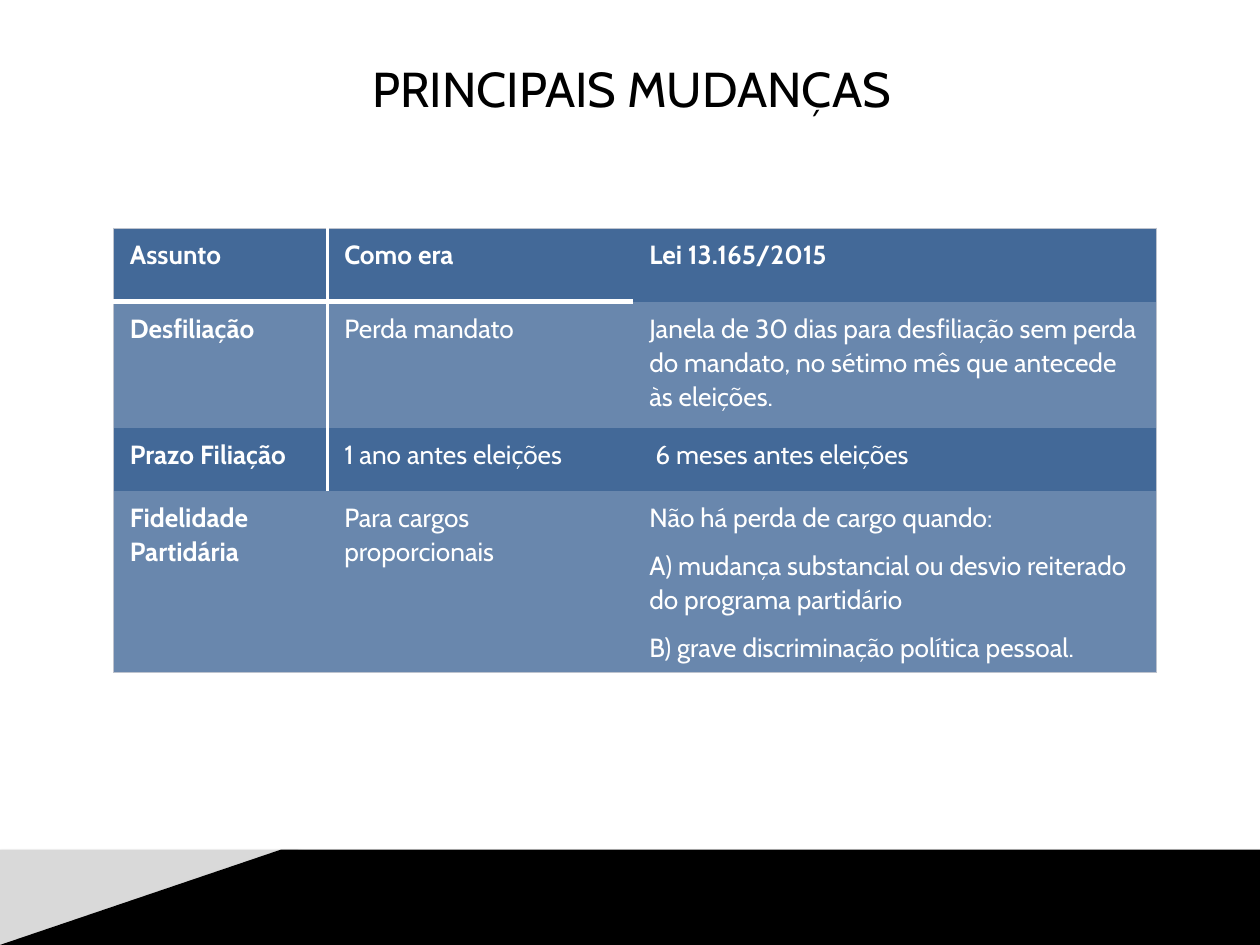
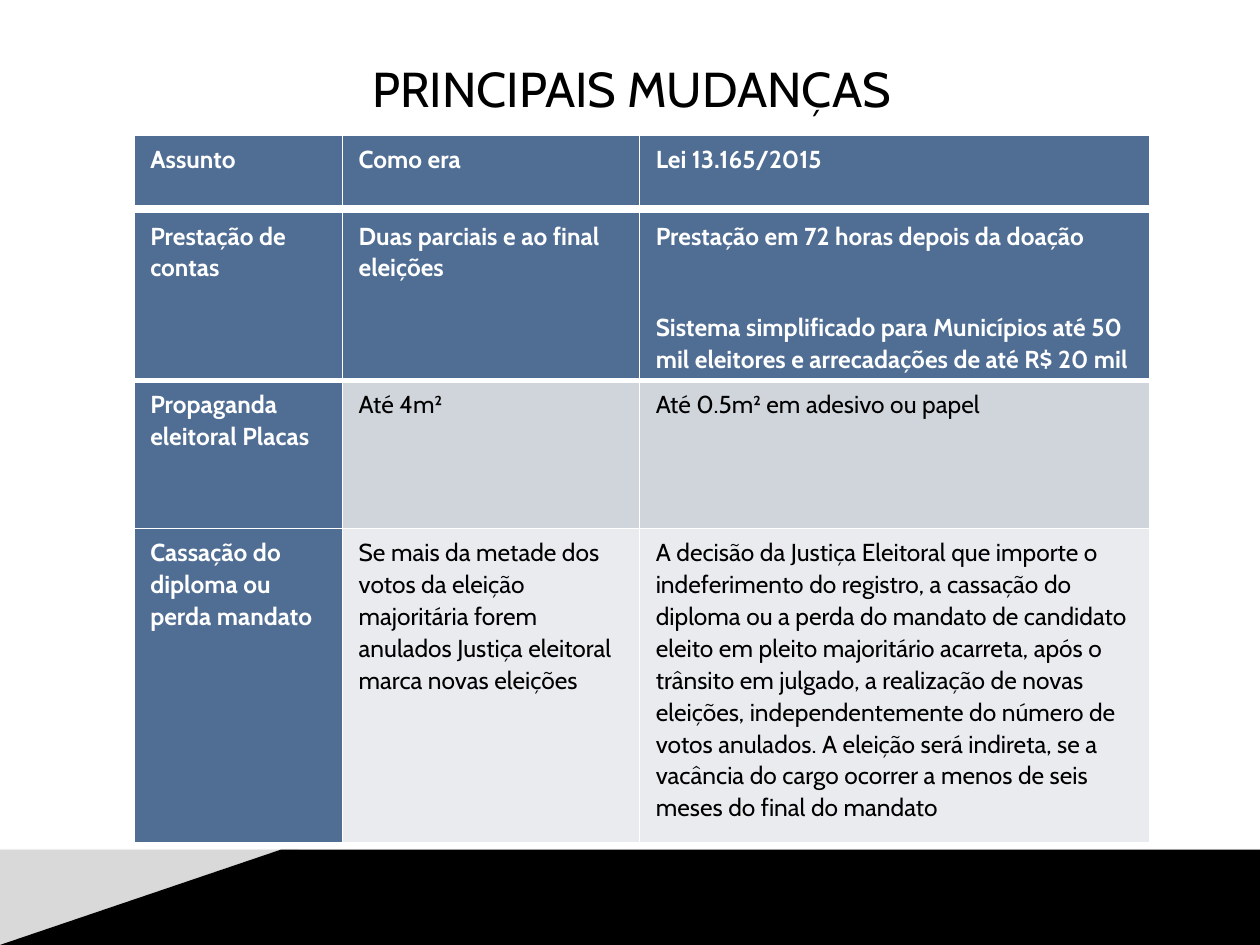
from dataclasses import dataclass

from lxml import etree
from pptx import Presentation
from pptx.dml.color import RGBColor
from pptx.enum.text import MSO_ANCHOR, PP_ALIGN
from pptx.oxml.ns import qn
from pptx.util import Cm, Pt

CENTER = PP_ALIGN.CENTER
MIDDLE = MSO_ANCHOR.MIDDLE
BLANK_LAYOUT = 6
PLAIN_TABLE_STYLE = "{2D5ABB26-0587-4C30-8999-92F81FD0307C}"
SIDES = {"left": "a:lnL", "right": "a:lnR", "top": "a:lnT", "bottom": "a:lnB"}


@dataclass(frozen=True)
class Theme:
    """Colours and type sizes of the deck."""
    font: str = "Cabin"
    white: str = "FFFFFF"
    black: str = "000000"
    wedge: str = "D9D9D9"
    frame: str = "BDC3CE"
    blue: str = "436998"
    light_blue: str = "6987AD"
    slate: str = "506E94"
    gray: str = "D0D5DC"
    light_gray: str = "E9EBEE"
    title_size: int = 28
    rules_size: int = 15
    campaign_size: int = 14


@dataclass(frozen=True)
class TableLook:
    """Format of one kind of table."""
    size: int
    columns: tuple
    margin_y: float
    gap: int
    fill: object
    body_color: str
    borders: object


THEME = Theme()
TITLE = "PRINCIPAIS MUDANÇAS"
HEADINGS = ("Assunto", "Como era", "Lei 13.165/2015")
PARTY_ROWS = [
    HEADINGS,
    ("Desfiliação", "Perda mandato",
     "Janela de 30 dias para desfiliação sem perda do mandato, "
     "no sétimo mês que antecede às eleições."),
    ("Prazo Filiação", "1 ano antes eleições", "6 meses antes eleições"),
    ("Fidelidade Partidária", "Para cargos proporcionais",
     "Não há perda de cargo quando:\n"
     "A) mudança substancial ou desvio reiterado do programa partidário\n"
     "B) grave discriminação política pessoal."),
]
CAMPAIGN_ROWS = [
    ("Prestação de contas", "Duas parciais e ao final eleições",
     "Prestação em 72 horas depois da doação\n"
     "Sistema simplificado para Municípios até 50 mil eleitores "
     "e arrecadações de até R$ 20 mil"),
    ("Propaganda eleitoral Placas", "Até 4m²", "Até 0.5m² em adesivo ou papel"),
    ("Cassação do diploma ou perda mandato",
     "Se mais da metade dos votos da eleição majoritária forem anulados "
     "Justiça eleitoral marca novas eleições",
     "A decisão da Justiça Eleitoral que importe o indeferimento do registro, "
     "a cassação do diploma ou a perda do mandato de candidato eleito em pleito "
     "majoritário acarreta, após o trânsito em julgado, a realização de novas "
     "eleições, independentemente do número de votos anulados. A eleição será "
     "indireta, se a vacância do cargo ocorrer a menos de seis meses do final "
     "do mandato"),
]


def apply_format(target, values):
    """Set each named attribute on the target."""
    for name, value in values.items():
        setattr(target, name, value)


def write_para(para, text, size, color, bold=False, **layout):
    """Fill a paragraph with one formatted span."""
    apply_format(para, layout)
    span = para.add_run()
    span.text = text
    apply_format(span.font, {"name": THEME.font, "size": Pt(size), "bold": bold})
    span.font.color.rgb = RGBColor.from_string(color)


def add_title(page, text):
    """Add the centred page title."""
    box = page.shapes.add_textbox(Cm(2.29), Cm(1.02), Cm(20.88), Cm(1.52))
    apply_format(box.text_frame, {"word_wrap": True, "vertical_anchor": MIDDLE})
    write_para(box.text_frame.paragraphs[0], text, THEME.title_size, THEME.black,
               alignment=CENTER)


def add_soft_shadow(shape):
    """Give a shape a short downward shadow."""
    shape.shadow.inherit = False
    effects = shape._element.spPr.find(qn("a:effectLst"))
    shadow = etree.SubElement(effects, qn("a:outerShdw"), blurRad=str(Pt(3.1)),
                              dist=str(Pt(1.6)), dir="5400000", rotWithShape="0")
    color = etree.SubElement(shadow, qn("a:srgbClr"), val=THEME.black)
    etree.SubElement(color, qn("a:alpha"), val="38000")


def add_band(page, color, points):
    """Add one filled outline of the footer."""
    corners = [(Cm(x), Cm(y)) for x, y in points]
    builder = page.shapes.build_freeform(*corners[0], scale=1.0)
    builder.add_line_segments(corners[1:], close=True)
    band = builder.convert_to_shape()
    band.fill.solid()
    band.fill.fore_color.rgb = RGBColor.from_string(color)
    band.line.fill.background()
    add_soft_shadow(band)


def add_footer(page):
    """Add the gray wedge and the black band."""
    top, bottom, right = 17.13, 19.05, 25.4
    add_band(page, THEME.wedge, [(0, bottom), (0, top), (6, top), (10.5, bottom)])
    add_band(page, THEME.black,
             [(0, bottom), (5.66, top), (right, top), (right, bottom)])


def set_borders(cell, borders):
    """Draw the given sides of a cell as (colour, points)."""
    properties = cell._tc.get_or_add_tcPr()
    drawn = [side for side in SIDES if side in borders]
    for position, side in enumerate(drawn):
        color, width = borders[side]
        line = etree.Element(qn(SIDES[side]), w=str(Pt(width)))
        fill = etree.SubElement(line, qn("a:solidFill"))
        etree.SubElement(fill, qn("a:srgbClr"), val=color)
        properties.insert(position, line)


def party_fill(row, column):
    """Alternate the two blues by row."""
    return THEME.light_blue if row % 2 else THEME.blue


def party_borders(row, column):
    """Frame the table and rule off its headings."""
    edges = {"left": column == 0, "right": column == 2,
             "top": row == 0, "bottom": row == 3}
    borders = {side: (THEME.frame, 0.75) for side, on in edges.items() if on}
    if column == 0 and row < 3:
        borders["right"] = (THEME.white, 2)
    if row == 0 and column < 2:
        borders["bottom"] = (THEME.white, 3)
    return borders


def campaign_fill(row, column):
    """Use slate for headings and grays for the body."""
    if row == 0 or column == 0:
        return THEME.slate
    return THEME.gray if row % 2 else THEME.light_gray


def campaign_borders(row, column):
    """Draw a white grid with a thick rule under the first row."""
    borders = {side: (THEME.white, 1) for side in SIDES}
    if row == 0:
        borders["bottom"] = (THEME.white, 3)
    elif row == 1:
        del borders["top"]
    return borders


def fill_cell(cell, text, look, row, column):
    """Write and format one table cell."""
    heading = row == 0 or column == 0
    apply_format(cell, {"margin_left": Cm(0.33), "margin_right": Cm(0.33),
                        "margin_top": Cm(look.margin_y),
                        "margin_bottom": Cm(look.margin_y)})
    cell.fill.solid()
    cell.fill.fore_color.rgb = RGBColor.from_string(look.fill(row, column))
    set_borders(cell, look.borders(row, column))
    frame = cell.text_frame
    for index, line in enumerate(text.split("\n")):
        para = frame.add_paragraph() if index else frame.paragraphs[0]
        write_para(para, line, look.size, THEME.white if heading else look.body_color,
                   heading, line_spacing=1.07, space_after=Pt(8),
                   space_before=Pt(look.gap if index else 0))


def add_grid(page, left, top, heights, rows, look):
    """Add a table and return it."""
    frame = page.shapes.add_table(len(rows), len(look.columns), Cm(left), Cm(top),
                                  Cm(sum(look.columns)), Cm(sum(heights)))
    table = frame.table
    table._tbl.tblPr.find(qn("a:tableStyleId")).text = PLAIN_TABLE_STYLE
    for column, width in zip(table.columns, look.columns):
        column.width = Cm(width)
    for row, height in zip(table.rows, heights):
        row.height = Cm(height)
    for row, texts in enumerate(rows):
        for column, text in enumerate(texts):
            fill_cell(table.cell(row, column), text, look, row, column)
    return table


def add_page(deck):
    """Add a page with the shared footer and title."""
    page = deck.slides.add_slide(deck.slide_layouts[BLANK_LAYOUT])
    add_footer(page)
    add_title(page, TITLE)
    return page


def main():
    """Build and save the deck."""
    deck = Presentation()
    apply_format(deck, {"slide_width": Cm(25.4), "slide_height": Cm(19.05)})

    party = TableLook(THEME.rules_size, (4.32, 6.15, 10.55), 0.18, 0,
                      party_fill, THEME.white, party_borders)
    table = add_grid(add_page(deck), 2.29, 4.6, (1.48, 2.54, 1.27, 3.66),
                     PARTY_ROWS, party)
    table.cell(2, 2).margin_left = Cm(0.45)

    campaign = TableLook(THEME.campaign_size, (4.2, 5.99, 10.28), 0.15, 26,
                         campaign_fill, THEME.black, campaign_borders)
    page = add_page(deck)
    add_grid(page, 2.7, 4.27, (3.39, 2.98, 6.33), CAMPAIGN_ROWS, campaign)
    add_grid(page, 2.7, 2.72, (1.45,), [HEADINGS], campaign)

    deck.save("out.pptx")


if __name__ == "__main__":
    main()
